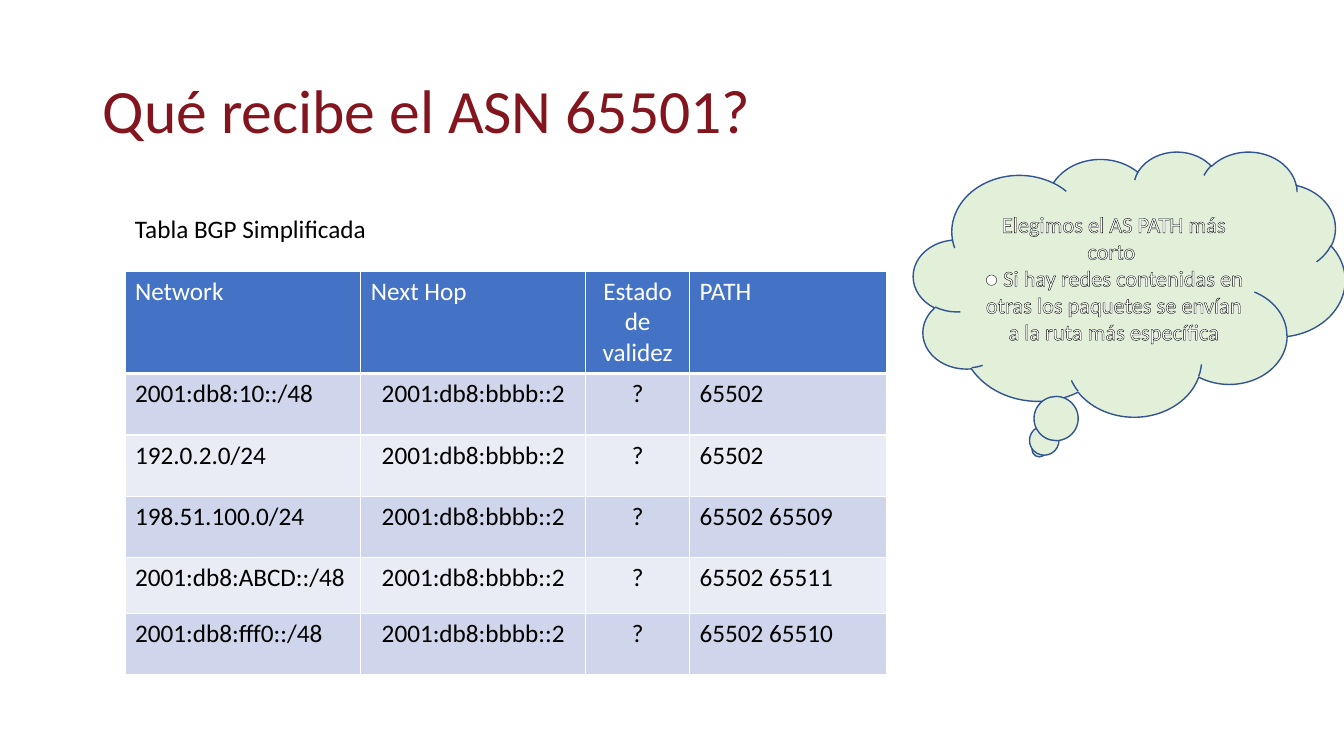
from lxml import etree
from pptx import Presentation
from pptx.dml.color import RGBColor
from pptx.enum.shapes import MSO_SHAPE
from pptx.enum.text import MSO_ANCHOR, PP_ALIGN
from pptx.oxml.ns import qn
from pptx.util import Inches, Pt

CLOUD = MSO_SHAPE.CLOUD_CALLOUT
MIDDLE = MSO_ANCHOR.MIDDLE
LEFT, CENTER = PP_ALIGN.LEFT, PP_ALIGN.CENTER

COLORS = {
    "title": "82151E",
    "black": "000000",
    "white": "FFFFFF",
    "header": "4472C4",
    "odd_row": "CFD5EA",
    "even_row": "E9EBF5",
    "cloud": "E2F0D9",
    "cloud_line": "325491",
}
HEADINGS = ["Network", "Next Hop", "Estado de validez", "PATH"]
ROUTES = [
    ("2001:db8:10::/48", "65502"),
    ("192.0.2.0/24", "65502"),
    ("198.51.100.0/24", "65502 65509"),
    ("2001:db8:ABCD::/48", "65502 65511"),
    ("2001:db8:fff0::/48", "65502 65510"),
]
NEXT_HOP = "2001:db8:bbbb::2"
COLUMN_SHARES = [17.55, 16.73, 7.73, 14.63]
ROW_SHARES = [11.6, 8.13, 8.13, 8.13, 7.33, 8.13]


class Slide:
    font = "Calibri"

    def __init__(self, deck):
        self.deck = deck
        self.page = deck.slides.add_slide(deck.slide_layouts[5])

    def across(self, percent):
        return int(self.deck.slide_width * percent / 100)

    def down(self, percent):
        return int(self.deck.slide_height * percent / 100)

    def area(self, left, top, width, height):
        return self.across(left), self.down(top), self.across(width), self.down(height)

    def color(self, name):
        return RGBColor.from_string(COLORS[name])

    def line(self, parent, tag, points, color):
        line = etree.SubElement(parent, qn(tag), w=str(Pt(points)))
        fill = etree.SubElement(line, qn("a:solidFill"))
        etree.SubElement(fill, qn("a:srgbClr"), val=COLORS[color])
        return line

    def add_text(self, para, text, size, color, align=LEFT):
        para.alignment = align
        span = para.add_run()
        span.text = text
        span.font.name = self.font
        span.font.size = Pt(size)
        span.font.color.rgb = self.color(color)
        return span

    def title(self, text, *shares):
        box = self.page.shapes.title
        box.left, box.top, box.width, box.height = self.area(*shares)
        box.text_frame.vertical_anchor = MIDDLE
        para = box.text_frame.paragraphs[0]
        para.line_spacing = 0.9
        self.add_text(para, text, 44, "title")

    def label(self, text, *shares):
        box = self.page.shapes.add_textbox(*self.area(*shares))
        box.text_frame.word_wrap = False
        self.add_text(box.text_frame.paragraphs[0], text, 18, "black")

    def table(self, rows, left, top):
        table = self.page.shapes.add_table(
            len(rows), len(COLUMN_SHARES),
            *self.area(left, top, sum(COLUMN_SHARES), sum(ROW_SHARES)),
        ).table
        for column, share in zip(table.columns, COLUMN_SHARES):
            column.width = self.across(share)
        for row, share in zip(table.rows, ROW_SHARES):
            row.height = self.down(share)
        for row_number, values in enumerate(rows):
            for column_number, value in enumerate(values):
                centered = column_number == 2 or (column_number == 1 and row_number > 0)
                self.cell(table.cell(row_number, column_number), value, row_number, centered)

    def cell(self, cell, text, row_number, centered):
        is_header = row_number == 0
        band = "header" if is_header else ("even_row", "odd_row")[row_number % 2]
        properties = cell._tc.get_or_add_tcPr()
        for side in "LRTB":
            points = 3 if is_header and side == "B" else 1
            self.line(properties, f"a:ln{side}", points, "white")
        cell.fill.solid()
        cell.fill.fore_color.rgb = self.color(band)
        self.add_text(cell.text_frame.paragraphs[0], text, 18,
                      "white" if is_header else "black", CENTER if centered else LEFT)

    def cloud(self, texts, *shares):
        box = self.page.shapes.add_shape(CLOUD, *self.area(*shares))
        box.shadow.inherit = False
        box.fill.solid()
        box.fill.fore_color.rgb = self.color("cloud")
        box.line.color.rgb = self.color("cloud_line")
        box.line.width = Pt(1)
        frame = box.text_frame
        frame.word_wrap = True
        frame.vertical_anchor = MIDDLE
        for number, text in enumerate(texts):
            para = frame.add_paragraph() if number else frame.paragraphs[0]
            span = self.add_text(para, text, 16, "white", CENTER)
            properties = span._r.get_or_add_rPr()
            properties.insert(0, self.line(properties, "a:ln", 0.75, "black"))


def main():
    deck = Presentation()
    deck.slide_width, deck.slide_height = Inches(13.33), Inches(7.5)
    slide = Slide(deck)
    slide.title("Qué recibe el ASN 65501?", 6.9, 5.33, 86.27, 19.33)
    rows = [HEADINGS] + [[network, NEXT_HOP, "?", route] for network, route in ROUTES]
    slide.table(rows, 9.3, 35.87)
    slide.label("Tabla BGP Simplificada", 9.3, 27.6, 18.9, 5.33)
    slide.cloud([
        "Elegimos el AS PATH más corto ",
        "● Si hay redes contenidas en otras los paquetes se envían a la ruta más específica",
    ], 67.97, 20, 32.11, 35.07)
    deck.save("out.pptx")


if __name__ == "__main__":
    main()
